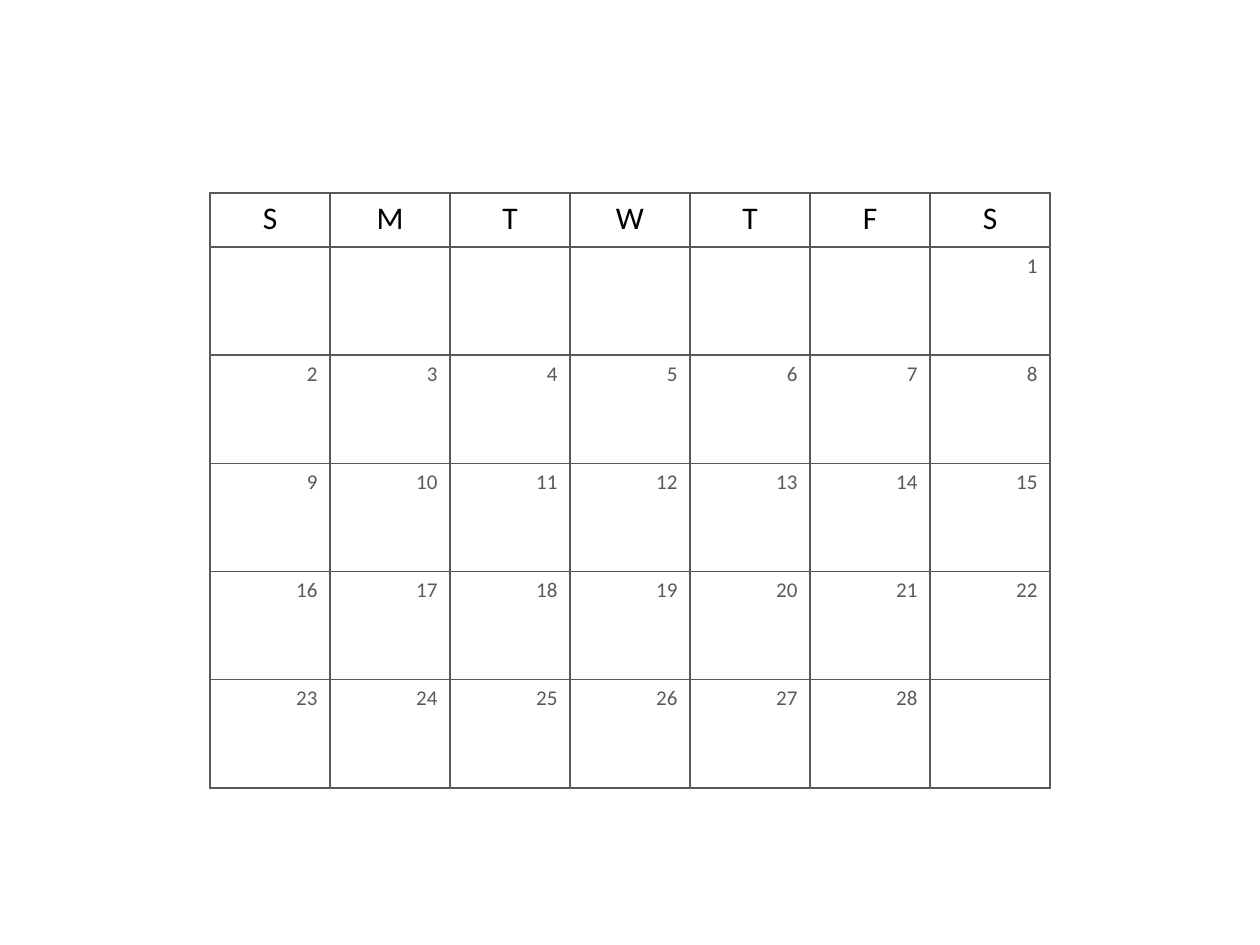
from dataclasses import dataclass

from lxml.etree import SubElement as Sub
from pptx import Presentation
from pptx.dml.color import RGBColor
from pptx.enum.text import PP_ALIGN as Align
from pptx.oxml.ns import qn
from pptx.table import _Cell as Cell
from pptx.util import Emu, Pt

BLACK = RGBColor(0x00, 0x00, 0x00)
GRAY = RGBColor(0x59, 0x59, 0x59)
FONT = "Calibri"
DPI = 126

DAYS = "SMTWTFS"
WEEKS = 5
START = 6
LAST = 28

LEFT, TOP = 210, 193
COL = 120
HEAD, BODY = 54, 541


@dataclass(frozen=True)
class Style:
    size: int
    color: RGBColor
    align: Align


DAY = Style(18, BLACK, Align.CENTER)
DATE = Style(12, GRAY, Align.RIGHT)


def px(n: int) -> Emu:
    return Emu(round(n * 914400 / DPI))


def edge(cell: Cell) -> None:
    props = cell._tc.get_or_add_tcPr()
    for side in ("lnL", "lnR", "lnT", "lnB"):
        line = Sub(props, qn(f"a:{side}"), w=str(Pt(1)))
        fill = Sub(line, qn("a:solidFill"))
        Sub(fill, qn("a:srgbClr"), val=str(GRAY))


def write(cell: Cell, text: str, style: Style) -> None:
    edge(cell)
    cell.fill.background()
    cell.text = text
    para = cell.text_frame.paragraphs[0]
    para.alignment = style.align
    para.font.name = FONT
    para.font.size = Pt(style.size)
    para.font.color.rgb = style.color


def main() -> None:
    deck = Presentation()
    deck.slide_width, deck.slide_height = px(1260), px(945)
    slide = deck.slides.add_slide(deck.slide_layouts[6])

    width = COL * len(DAYS)
    table = slide.shapes.add_table(
        WEEKS + 1, len(DAYS), px(LEFT), px(TOP), px(width), px(HEAD + BODY)
    ).table
    table.first_row = False
    table.horz_banding = False
    for col in table.columns:
        col.width = px(COL)
    for row in table.rows:
        row.height = Emu(px(BODY) // WEEKS)
    table.rows[0].height = px(HEAD)

    for col, name in enumerate(DAYS):
        write(table.cell(0, col), name, DAY)
        for week in range(WEEKS):
            date = week * len(DAYS) + col - START + 1
            text = str(date) if 1 <= date <= LAST else ""
            write(table.cell(week + 1, col), text, DATE)

    deck.save("out.pptx")


if __name__ == "__main__":
    main()
